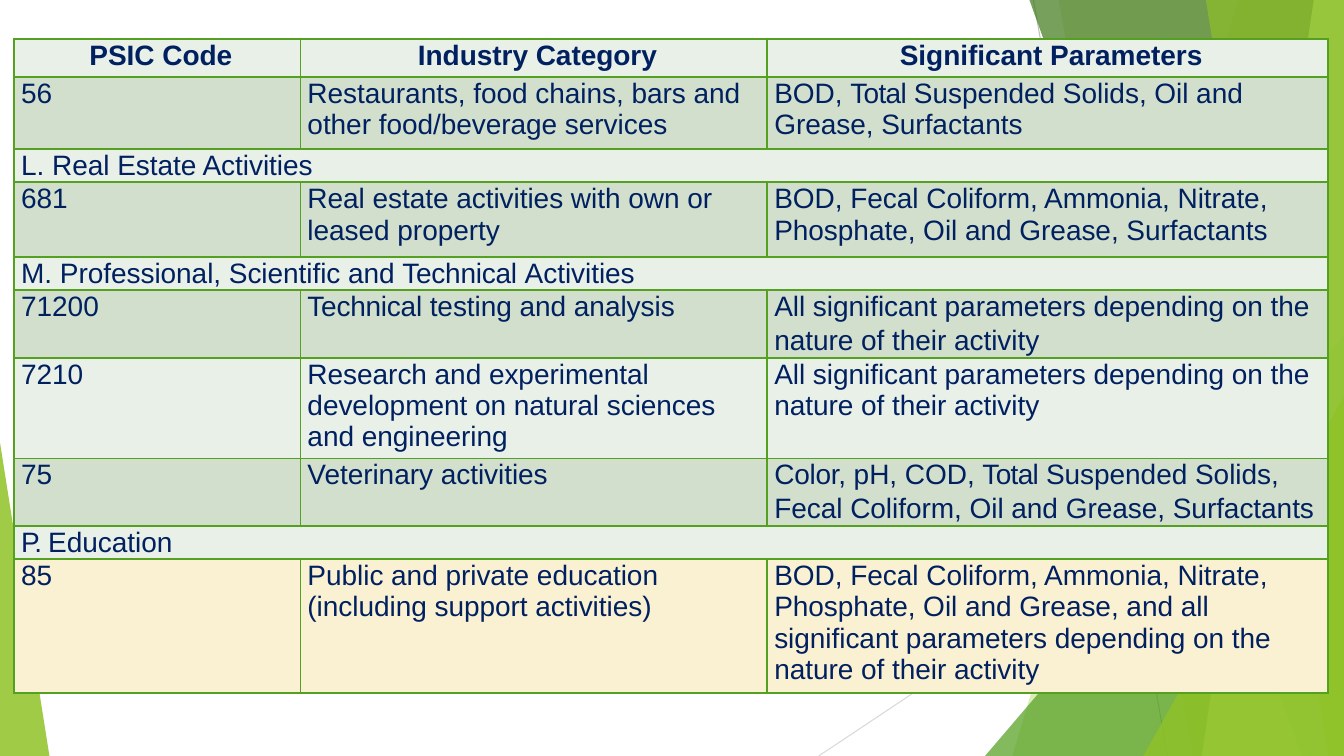
import pptx
import pptx.util
import pptx.dml.color
import pptx.enum.text
import pptx.enum.shapes
import pptx.oxml
import pptx.oxml.ns
import lxml.etree

WIDE, HIGH = 13.33, 7.5
INK, EDGE = "002060", "54A021"
PALE, SAGE, CREAM = "E9F0E8", "D1DFCC", "FAF1D2"
LEFT, TOP = 0.14, 0.39
COLS = [2.84, 4.63, 5.56]
TIGHT = {"Total ": -50, "Technical ": -20, "Color, ": -20, "P. ": -130}

RAYS = [
    ((10.25, 0), (11.58, HIGH), "BFBFBF"),
    ((WIDE, 4.03), (8.12, HIGH), "D9D9D9"),
]
RIGHT = [(WIDE, HIGH)]
SHARDS = [
    ("90C226", 30, [(WIDE, 0), (12.28, 0), (10.04, HIGH)] + RIGHT),
    ("90C226", 20, [(WIDE, 0), (10.5, 0), (11.83, HIGH)] + RIGHT),
    ("54A021", 72, [(WIDE, 3.33), (9.77, HIGH)] + RIGHT),
    ("3F7819", 70, [(WIDE, 0), (10.21, 0), (12.91, HIGH)] + RIGHT),
    ("C0E474", 70, [(WIDE, 0), (13.03, 0), (11.92, HIGH)] + RIGHT),
    ("90C226", 65, [(WIDE, 0), (11.96, 0), (13.18, HIGH)] + RIGHT),
    ("90C226", 80, [(WIDE, 3.93), (11.34, HIGH)] + RIGHT),
    ("90C226", 85, [(0, 4.39), (0, HIGH), (0.49, HIGH)]),
]

ROWS = [
    (0.37, PALE, None, ["PSIC Code", "Industry Category", "Significant Parameters"]),
    (0.72, SAGE, None, [
        "56",
        "Restaurants, food chains, bars and\nother food/beverage services",
        "BOD, |Total |Suspended Solids, Oil and\nGrease, Surfactants"]),
    (0.33, PALE, None, ["L. Real Estate Activities"]),
    (0.74, SAGE, None, [
        "681",
        "Real estate activities with own or\nleased property",
        "BOD, Fecal Coliform, Ammonia, Nitrate,\nPhosphate, Oil and Grease, Surfactants"]),
    (0.33, PALE, None, ["M. Professional, Scientific and |Technical |Activities"]),
    (0.67, SAGE, 23.9, [
        "71200",
        "Technical |testing and analysis",
        "All significant parameters depending on the\nnature of their activity"]),
    (1, PALE, None, [
        "7210",
        "Research and experimental\ndevelopment on natural sciences  and engineering",
        "All significant parameters depending on the\nnature of their activity"]),
    (0.67, SAGE, 23.9, [
        "75",
        "Veterinary activities",
        "Color, |pH, COD, |Total |Suspended Solids,\nFecal Coliform, Oil and Grease, Surfactants"]),
    (0.33, PALE, None, ["P. |Education"]),
    (1.33, CREAM, None, [
        "85",
        "Public and private education\n(including support activities)",
        "BOD, Fecal Coliform, Ammonia, Nitrate,\nPhosphate, Oil and Grease, and all  significant "
        "parameters depending on the  nature of their activity"]),
]

inch = pptx.util.Inches
qn = pptx.oxml.ns.qn


def paint(fill, tone):
    fill.solid()
    fill.fore_color.rgb = pptx.dml.color.RGBColor.from_string(tone)


def ray(slide, start, end, tone):
    kind = pptx.enum.shapes.MSO_CONNECTOR.STRAIGHT
    line = slide.shapes.add_connector(kind, *[inch(v) for v in start + end])
    paint(line.line.fill, tone)
    line.line.width = pptx.util.Pt(0.75)
    lxml.etree.SubElement(line._element.spPr, qn("a:effectLst"))


def shard(slide, tone, solid, points):
    spots = [(inch(x), inch(y)) for x, y in points]
    pen = slide.shapes.build_freeform(*spots[0])
    pen.add_line_segments(spots[1:], close=True)
    shape = pen.convert_to_shape()
    shape.shadow.inherit = False
    shape.line.fill.background()
    paint(shape.fill, tone)
    color = shape._element.spPr.find(".//" + qn("a:srgbClr"))
    lxml.etree.SubElement(color, qn("a:alpha")).set("val", str(solid * 1000))


def frame(cell, tone):
    cell.margin_top = cell.margin_bottom = cell.margin_right = 0
    cell.margin_left = inch(0.07)
    props = cell._tc.get_or_add_tcPr()
    for side in ("lnL", "lnR", "lnT", "lnB"):
        edge = lxml.etree.SubElement(props, qn("a:" + side), w=str(pptx.util.Pt(1.5)))
        fill = lxml.etree.SubElement(edge, qn("a:solidFill"))
        lxml.etree.SubElement(fill, qn("a:srgbClr"), val=EDGE)
    paint(cell.fill, tone)


def write(cell, text, head, first, rest):
    for num, line in enumerate(text.split("\n")):
        body = cell.text_frame
        para = body.add_paragraph() if num else body.paragraphs[0]
        gap = rest if num else first
        if gap:
            para.line_spacing = pptx.util.Pt(gap)
        if head:
            para.alignment = pptx.enum.text.PP_ALIGN.CENTER
        for part in line.split("|"):
            run = para.add_run()
            run.text = part
            run.font.name, run.font.size = "Arial", pptx.util.Pt(20)
            run.font.bold = head
            paint(run.font.fill, INK)
            run._r.get_or_add_rPr().set("spc", str(TIGHT.get(part, -5)))


def grid(slide):
    size = sum(COLS), sum(row[0] for row in ROWS)
    box = [inch(v) for v in (LEFT, TOP) + size]
    table = slide.shapes.add_table(len(ROWS), len(COLS), *box).table
    table.first_row = table.horz_banding = False
    for col, wide in zip(table.columns, COLS):
        col.width = inch(wide)
    for num, (high, tone, rest, texts) in enumerate(ROWS):
        table.rows[num].height = inch(high)
        cells = [table.cell(num, col) for col in range(len(COLS))]
        for cell in cells:
            frame(cell, tone)
        if len(texts) == 1:
            cells[0].merge(cells[-1])
        for cell, text in zip(cells, texts):
            write(cell, text, num == 0, 23.1 if num else 22.9, rest)


def main():
    deck = pptx.Presentation()
    deck.slide_width, deck.slide_height = inch(WIDE), inch(HIGH)
    slide = deck.slides.add_slide(deck.slide_layouts[6])
    for item in RAYS:
        ray(slide, *item)
    for item in SHARDS:
        shard(slide, *item)
    grid(slide)
    deck.save("out.pptx")


if __name__ == "__main__":
    main()
